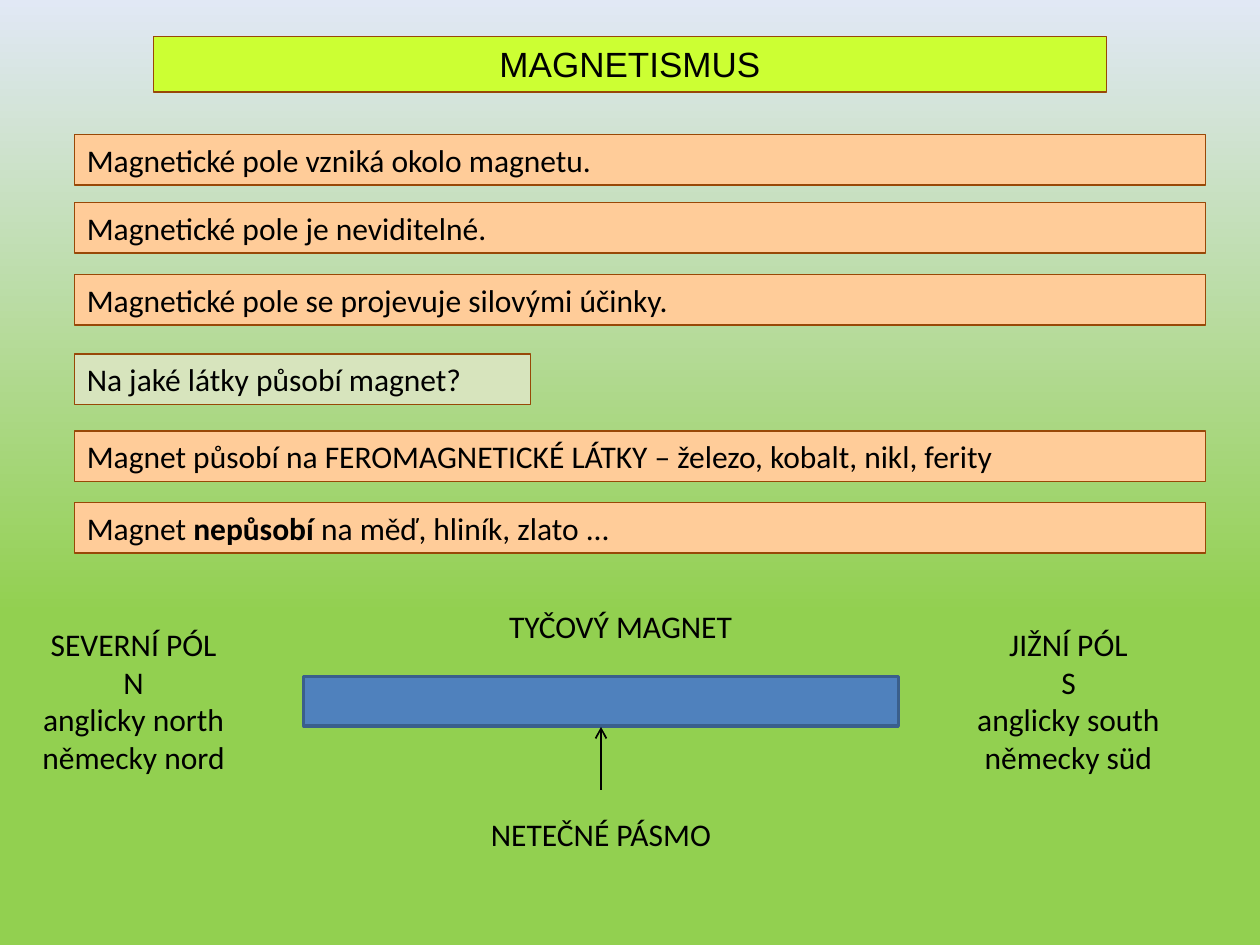
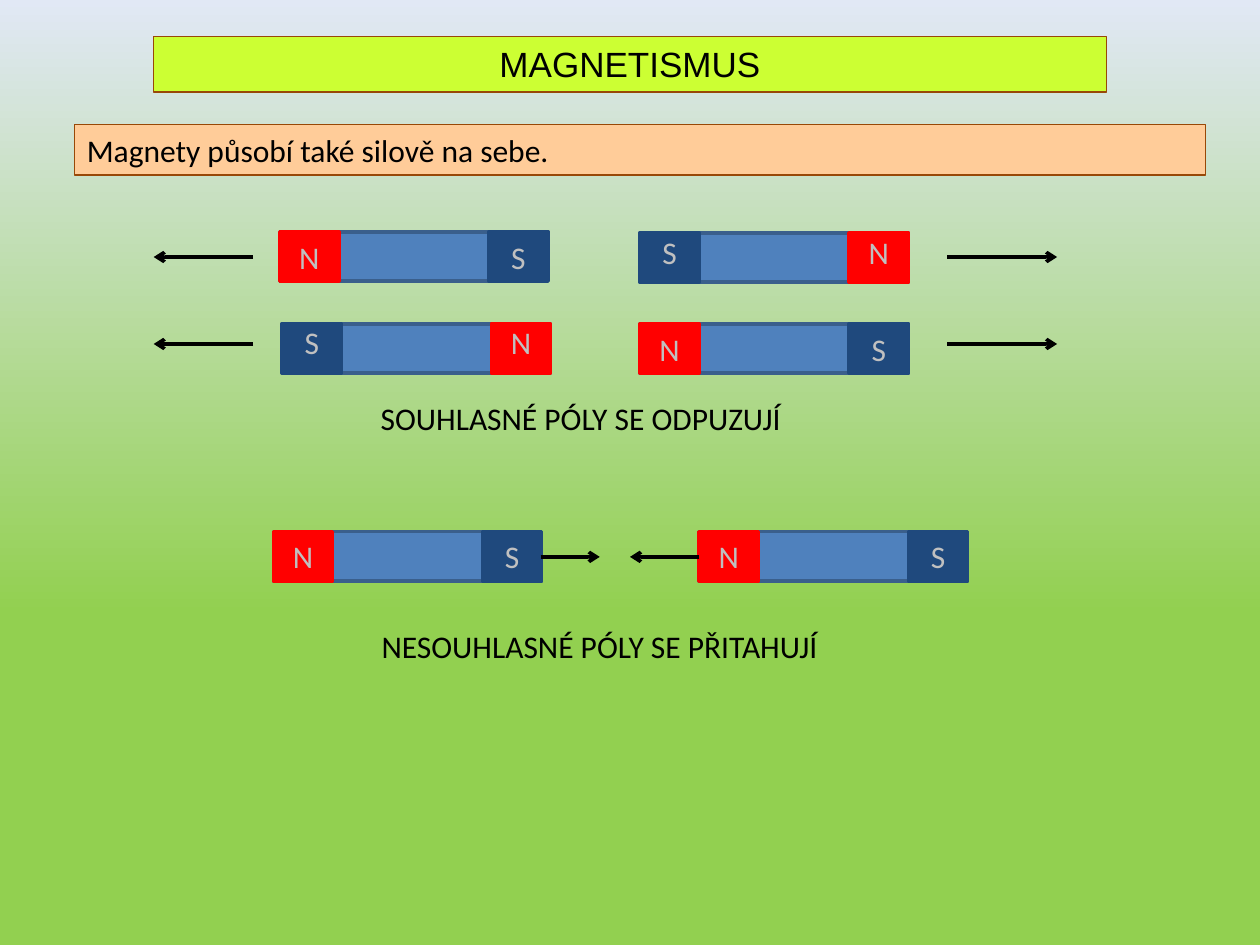
"""Build two slides on magnetism: the magnetic field and the forces between magnets."""
from lxml import etree
from pptx import Presentation
from pptx.dml.color import RGBColor
from pptx.enum.shapes import MSO_CONNECTOR, MSO_SHAPE
from pptx.enum.text import MSO_ANCHOR, PP_ALIGN
from pptx.oxml.ns import qn
from pptx.util import Inches, Pt

RECTANGLE, STRAIGHT = MSO_SHAPE.RECTANGLE, MSO_CONNECTOR.STRAIGHT
LEFT, CENTER = PP_ALIGN.LEFT, PP_ALIGN.CENTER
TOP, MIDDLE = MSO_ANCHOR.TOP, MSO_ANCHOR.MIDDLE

BLACK, SILVER = "000000", "C0C0C0"
LIME, PEACH, SAGE, BROWN = "CCFF33", "FFCC99", "D7E4BD", "984807"
STEEL, STEEL_EDGE = "4F81BD", "3A5F8C"
POLE_COLORS = {"N": "FF0000", "S": "1F497D"}
BACKGROUND = [(0, "92D050"), (35, "92D050"), (100, "E1E8F5")]

TITLE = "MAGNETISMUS"
TITLE_AREA = (1.22, 0.29, 7.56, 0.44)
PANEL_LEFT, PANEL_WIDTH, QUESTION_WIDTH, LINE_HEIGHT = 0.59, 8.98, 3.62, 0.4
MAGNET_WIDTH, MAGNET_HEIGHT, POLE_WIDTH = 2.13, 0.39, 0.47

# Asterisks enclose bold words.
FIELD_PANELS = [
    (1.07, "Magnetické pole vzniká okolo magnetu."),
    (1.61, "Magnetické pole je neviditelné."),
    (2.18, "Magnetické pole se projevuje silovými účinky."),
    (2.81, "Na jaké látky působí magnet?"),
    (3.42, "Magnet působí na FEROMAGNETICKÉ LÁTKY – železo, kobalt, nikl, ferity"),
    (3.99, "Magnet *nepůsobí* na měď, hliník, zlato ..."),
]
BAR_AREA = (2.41, 5.37, 4.72, MAGNET_HEIGHT)
BAR_LABELS = [
    ((3.59, 6.42, 2.36, 0.4), ["NETEČNÉ PÁSMO"]),
    ((-0.03, 4.91, 2.18, 1.31),
     ["SEVERNÍ PÓL", "N", "anglicky north", "německy nord"]),
    ((7.39, 4.91, 2.18, 1.31),
     ["JIŽNÍ PÓL", "S", "anglicky south", "německy süd"]),
    ((3.27, 4.77, 3.31, 0.4), ["TYČOVÝ MAGNET"]),
]
FORCE_PANELS = [(0.99, "Magnety působí také silově na sebe.")]
MAGNETS = [
    (2.22, 1.84, "NS"), (5.08, 1.85, "SN"),
    (2.24, 2.57, "SN"), (5.08, 2.57, "NS"),
    (2.17, 4.22, "NS"), (5.55, 4.22, "NS"),
]
FORCE_ARROWS = [
    (start, end, top)
    for top, pair in [
        (2.04, [(2.01, 1.22), (7.52, 8.39)]),
        (2.73, [(2.01, 1.22), (7.52, 8.39)]),
        (4.42, [(4.29, 4.76), (5.55, 5)]),
    ]
    for start, end in pair
]
FORCE_LABELS = [
    ((2.01, 3.12, 5.2, 0.4), ["SOUHLASNÉ PÓLY SE ODPUZUJÍ"]),
    ((2.16, 4.93, 5.2, 0.4), ["NESOUHLASNÉ PÓLY SE PŘITAHUJÍ"]),
]


def rgb(value):
    return RGBColor.from_string(value)


def inches(area):
    return [Inches(length) for length in area]


def write(box, lines, size=18, font="Calibri", color=BLACK, align=LEFT, anchor=TOP):
    frame = box.text_frame
    frame.word_wrap = True
    frame.vertical_anchor = anchor
    for index, line in enumerate(lines):
        para = frame.add_paragraph() if index else frame.paragraphs[0]
        para.alignment = align
        for part, words in enumerate(line.split("*")):
            span = para.add_run()
            span.text = words
            span.font.name, span.font.size = font, Pt(size)
            span.font.bold = part % 2 == 1
            span.font.color.rgb = rgb(color)


def paint(box, fill, edge, width):
    box.fill.solid()
    box.fill.fore_color.rgb = rgb(fill)
    box.line.color.rgb = rgb(edge)
    box.line.width = Pt(width)


def add_box(shapes, area, fill, edge, width):
    box = shapes.add_shape(RECTANGLE, *inches(area))
    box.shadow.inherit = False
    paint(box, fill, edge, width)
    return box


def add_arrow(page, start, end, width):
    arrow = page.shapes.add_connector(STRAIGHT, *inches(start + end))
    arrow.line.color.rgb = rgb(BLACK)
    arrow.line.width = Pt(width)
    properties = arrow.element.spPr
    etree.SubElement(properties.find(qn("a:ln")), qn("a:tailEnd"), type="arrow")
    etree.SubElement(properties, qn("a:effectLst"))


def add_labels(page, labels):
    for area, lines in labels:
        write(page.shapes.add_textbox(*inches(area)), lines, align=CENTER)


def add_magnet(page, left, top, poles):
    group = page.shapes.add_group_shape()
    add_box(group.shapes, (left, top, MAGNET_WIDTH, MAGNET_HEIGHT), STEEL, STEEL_EDGE, 2)
    for index, pole in enumerate(poles):
        pole_left = left + index * (MAGNET_WIDTH - POLE_WIDTH)
        color = POLE_COLORS[pole]
        box = add_box(group.shapes, (pole_left, top, POLE_WIDTH, MAGNET_HEIGHT), color, color, 2)
        if poles == "SN":
            box.text_frame.margin_top, box.text_frame.margin_bottom = 0, Inches(0.1)
        write(box, [pole], color=SILVER, align=CENTER, anchor=MIDDLE)


def set_background(master):
    fill = master.background.fill
    fill.gradient()
    fill.gradient_angle = 90
    stops = master.element.find(".//" + qn("p:bg")).find(".//" + qn("a:gsLst"))
    for stop in list(stops):
        stops.remove(stop)
    for position, color in BACKGROUND:
        stop = etree.SubElement(stops, qn("a:gs"), pos=str(position * 1000))
        etree.SubElement(stop, qn("a:srgbClr"), val=color)


def add_page(deck, panels):
    page = deck.slides.add_slide(deck.slide_layouts.get_by_name("Title Only"))
    title = page.shapes.title
    title.left, title.top, title.width, title.height = inches(TITLE_AREA)
    paint(title, LIME, BROWN, 0.75)
    write(title, [TITLE], size=20, font="Arial", align=CENTER)
    for top, text in panels:
        question = text.endswith("?")
        width = QUESTION_WIDTH if question else PANEL_WIDTH
        area = (PANEL_LEFT, top, width, LINE_HEIGHT)
        box = add_box(page.shapes, area, SAGE if question else PEACH, BROWN, 0.75)
        write(box, [text])
    return page


def main():
    deck = Presentation()
    deck.slide_width, deck.slide_height = Inches(10), Inches(7.5)
    set_background(deck.slide_master)

    field = add_page(deck, FIELD_PANELS)
    add_box(field.shapes, BAR_AREA, STEEL, STEEL_EDGE, 2)
    add_arrow(field, (4.77, 6.27), (4.77, 5.77), 1)
    add_labels(field, BAR_LABELS)

    forces = add_page(deck, FORCE_PANELS)
    for left, top, poles in MAGNETS:
        add_magnet(forces, left, top, poles)
    for start, end, top in FORCE_ARROWS:
        add_arrow(forces, (start, top), (end, top), 2)
    add_labels(forces, FORCE_LABELS)

    deck.save("out.pptx")


if __name__ == "__main__":
    main()
